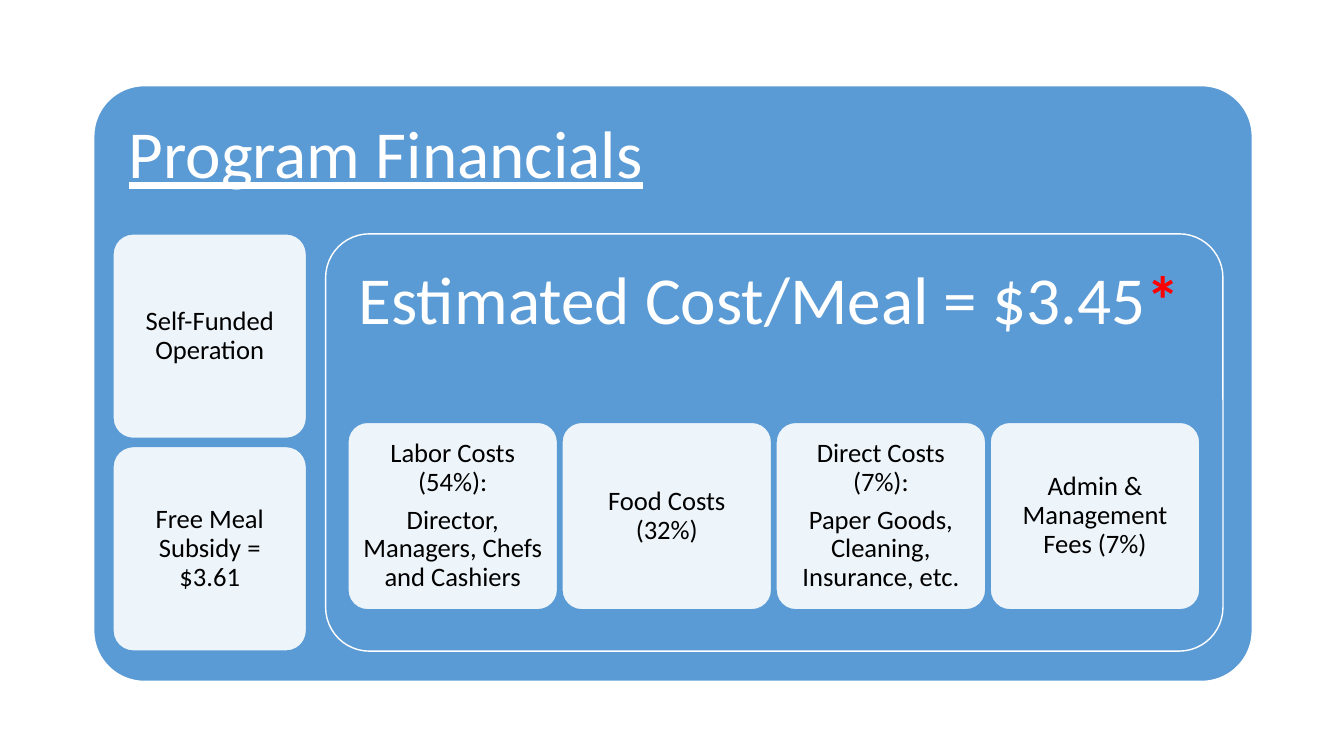
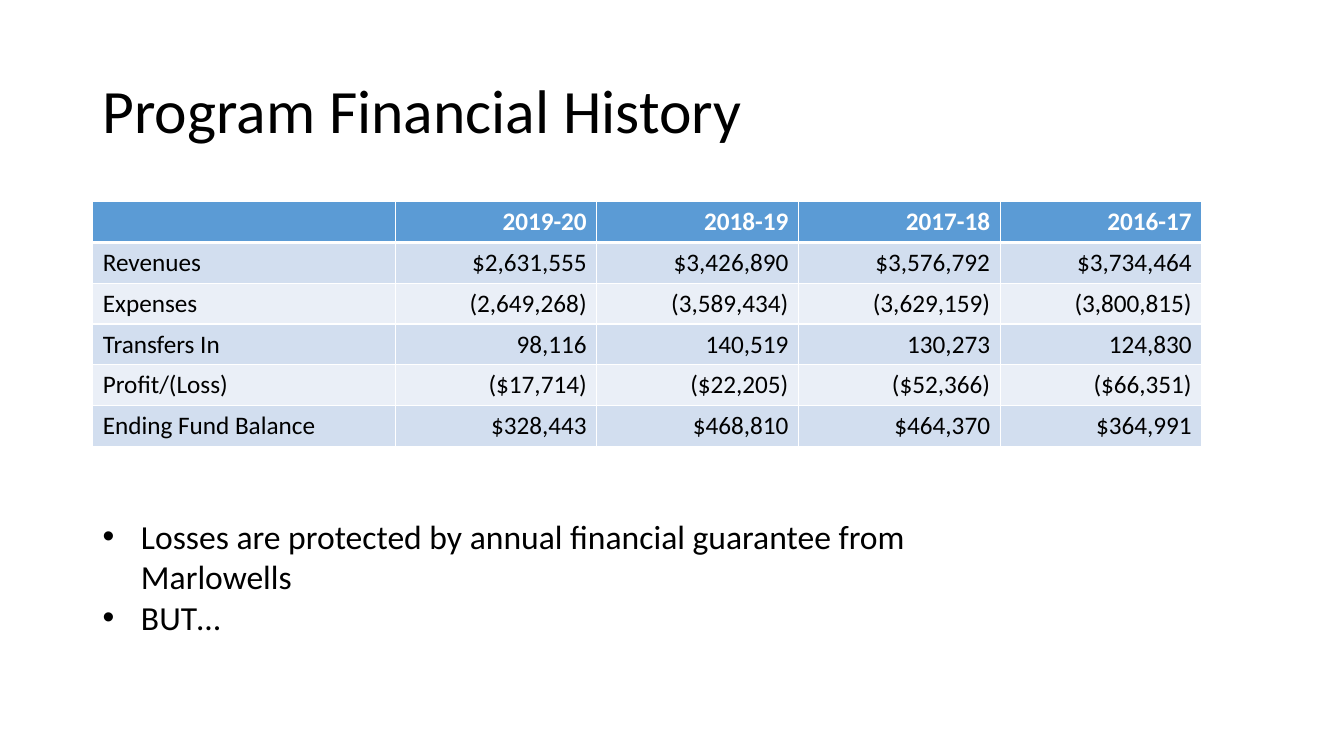
import pptx
import pptx.util
import pptx.dml.color
import pptx.enum.shapes
import pptx.enum.text
import pptx.oxml
import pptx.oxml.ns
import lxml.etree

Inches = pptx.util.Inches
Pt = pptx.util.Pt
ALIGN = pptx.enum.text.PP_ALIGN
ANCHOR = pptx.enum.text.MSO_ANCHOR
qn = pptx.oxml.ns.qn
FONT = "Calibri"
HEX = {
    "blue": "5B9BD5", "white": "FFFFFF", "black": "000000",
    "red": "FF0000", "odd": "D2DEEF", "even": "EAEFF7",
}


def color(name):
    return pptx.dml.color.RGBColor.from_string(HEX[name])


def add_run(para, text, size, ink, bold=False, line=False):
    run = para.add_run()
    run.text = text
    font = run.font
    font.name, font.size = FONT, Pt(size)
    font.bold, font.underline = bold, line
    font.color.rgb = color(ink)


def write(frame, text, size=18, ink="black", bold=False, line=False,
          align=ALIGN.LEFT, lead=1.0, gap=0, bullet=None, mark=None):
    for i, part in enumerate(text.split("\n")):
        para = frame.add_paragraph() if i else frame.paragraphs[0]
        para.alignment = align
        para.line_spacing = lead
        if i and gap:
            para.space_before = Pt(gap)
        if bullet:
            props = para._p.get_or_add_pPr()
            props.set("marL", str(Inches(0.38)))
            props.set("indent", str(-Inches(0.38)))
            face = lxml.etree.SubElement(props, qn("a:buFont"))
            face.set("typeface", "Arial")
            lxml.etree.SubElement(props, qn("a:buChar")).set("char", bullet)
        add_run(para, part, size, ink, bold, line)
    if mark:
        add_run(para, mark, size, "red", bold=True)


class Deck:
    def __init__(self):
        self.file = pptx.Presentation()
        self.file.slide_width = Inches(13.33)
        self.file.slide_height = Inches(7.5)
        self.slide = None

    def page(self):
        self.slide = self.file.slides.add_slide(self.file.slide_layouts[6])

    def box(self, place, text, anchor=ANCHOR.TOP, **style):
        frame = self.slide.shapes.add_textbox(*map(Inches, place)).text_frame
        frame.word_wrap = True
        frame.vertical_anchor = anchor
        write(frame, text, **style)

    def round(self, place, fill, edge, curve, inset, text, anchor, **style):
        kind = pptx.enum.shapes.MSO_SHAPE.ROUNDED_RECTANGLE
        shape = self.slide.shapes.add_shape(kind, *map(Inches, place))
        shape.shadow.inherit = False
        shape.adjustments[0] = curve
        shape.fill.solid()
        shape.fill.fore_color.rgb = color(fill)
        shape.line.color.rgb = color(edge)
        shape.line.width = Pt(1)
        frame = shape.text_frame
        frame.word_wrap = True
        frame.vertical_anchor = anchor
        frame.margin_left = frame.margin_right = Inches(inset)
        frame.margin_top = frame.margin_bottom = Inches(inset)
        write(frame, text, lead=0.9, **style)
        return shape

    def panel(self, place, curve, text, **style):
        self.round(place, "blue", "white", curve, 0.2, text, ANCHOR.TOP,
                   size=48, ink="white", **style)

    def card(self, place, text):
        shape = self.round(place, "white", "blue", 0.105, 0.08, text,
                           ANCHOR.MIDDLE, size=19, align=ALIGN.CENTER, gap=6.5)
        tint = shape.fill._xPr.find(qn("a:solidFill"))[0]
        lxml.etree.SubElement(tint, qn("a:alpha")).set("val", "90000")

    def edge(self, cell, low):
        props = cell._tc.get_or_add_tcPr()
        for side in "LRTB":
            line = lxml.etree.SubElement(props, qn(f"a:ln{side}"))
            line.set("w", str(Pt(low if side == "B" else 1)))
            fill = lxml.etree.SubElement(line, qn("a:solidFill"))
            tint = lxml.etree.SubElement(fill, qn("a:srgbClr"))
            tint.set("val", HEX["white"])

    def table(self, place, rows, widths):
        shape = self.slide.shapes.add_table(
            len(rows), len(widths), *map(Inches, place))
        grid = shape.table
        for col, width in zip(grid.columns, widths):
            col.width = Inches(width)
        for r, row in enumerate(rows):
            head = r == 0
            fill = "blue" if head else "odd" if r % 2 else "even"
            for c, text in enumerate(row):
                cell = grid.cell(r, c)
                self.edge(cell, 3 if head else 1)
                cell.fill.solid()
                cell.fill.fore_color.rgb = color(fill)
                if text:
                    write(cell.text_frame, text, bold=head,
                          ink="white" if head else "black",
                          align=ALIGN.RIGHT if c else ALIGN.LEFT)


def costs(deck):
    deck.page()
    deck.panel((0.93, 0.85, 11.49, 5.91), 0.085, "Program Financials",
               line=True)
    facts = ["Self-Funded Operation", "Free Meal Subsidy = $3.61"]
    for i, text in enumerate(facts):
        deck.card((1.12, 2.32 + i * 2.11, 1.92, 2.03), text)
    deck.panel((3.23, 2.32, 8.9, 4.14), 0.105, "Estimated Cost/Meal = $3.45",
               mark="*")
    shares = [
        "Labor Costs (54%):\nDirector, Managers, Chefs and Cashiers",
        "Food Costs (32%)",
        "Direct Costs (7%):\nPaper Goods, Cleaning, Insurance, etc.",
        "Admin & Management Fees (7%)",
    ]
    width = 2.08
    step = (8.45 - width) / (len(shares) - 1)
    for i, text in enumerate(shares):
        deck.card((3.45 + i * step, 4.19, width, 1.86), text)


def history(deck):
    deck.page()
    deck.box((0.92, 0.4, 11.5, 1.45), "Program Financial History",
             anchor=ANCHOR.MIDDLE, size=44, lead=0.9)
    rows = [
        ["", "2019-20", "2018-19", "2017-18", "2016-17"],
        ["Revenues", "$2,631,555", "$3,426,890", "$3,576,792", "$3,734,464"],
        ["Expenses", "(2,649,268)", "(3,589,434)", "(3,629,159)",
         "(3,800,815)"],
        ["Transfers In", "98,116", "140,519", "130,273", "124,830"],
        ["Profit/(Loss)", "($17,714)", "($22,205)", "($52,366)", "($66,351)"],
        ["Ending Fund Balance", "$328,443", "$468,810", "$464,370",
         "$364,991"],
    ]
    deck.table((0.92, 2, 11, 2.43), rows, [3, 2, 2, 2, 2])
    deck.box((0.92, 5.07, 9.72, 0.91),
             "Losses are protected by annual financial guarantee from "
             "Marlowells\nBUT…", size=24, bullet="•")


def main():
    deck = Deck()
    costs(deck)
    history(deck)
    deck.file.save("out.pptx")


if __name__ == "__main__":
    main()
